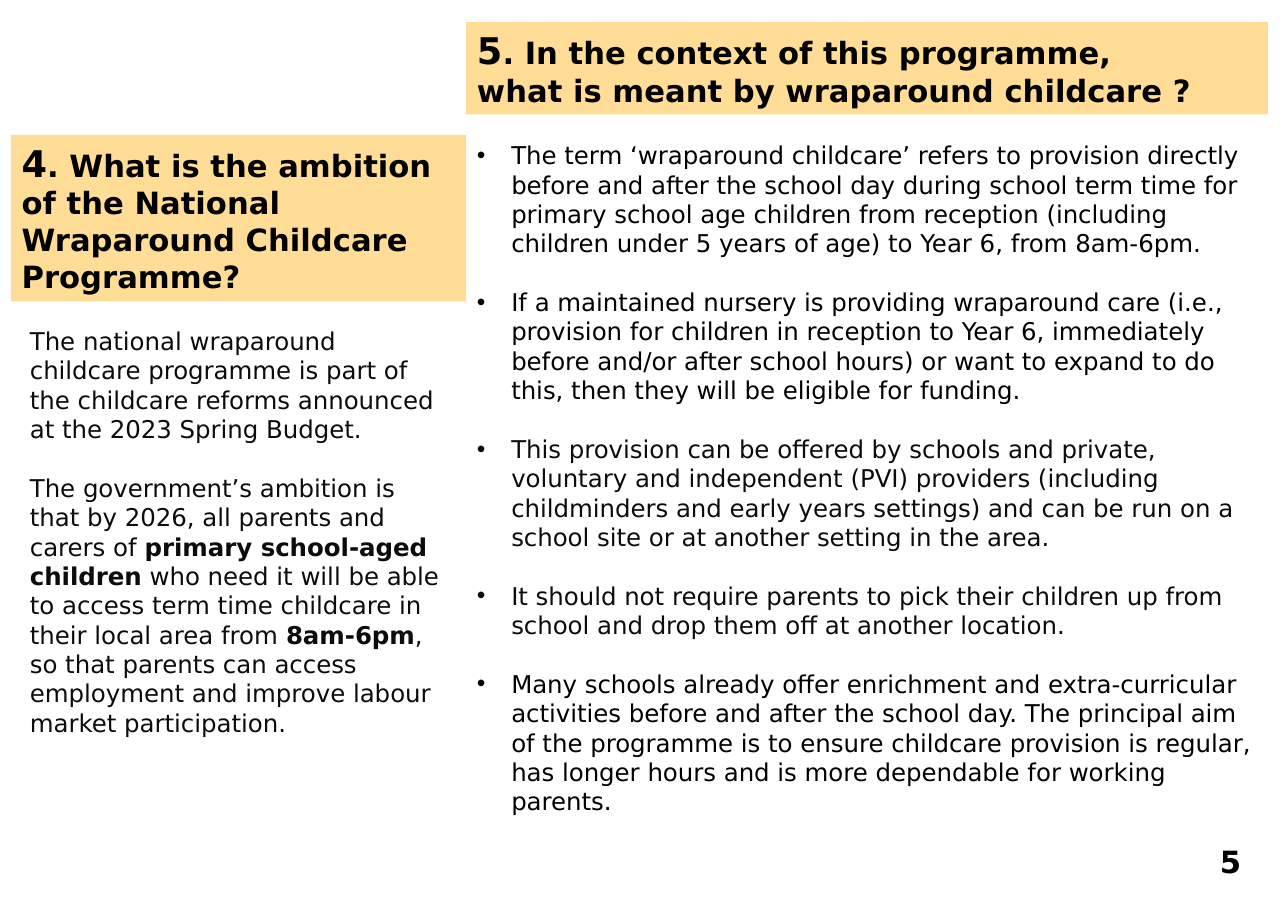
from lxml.etree import SubElement
from pptx import Presentation
from pptx.dml.color import RGBColor
from pptx.enum.shapes import MSO_SHAPE as SHAPE
from pptx.enum.text import MSO_ANCHOR as ANCHOR, PP_ALIGN as ALIGN
from pptx.oxml.ns import qn
from pptx.util import Cm, Pt

COLORS = {"band": "FFDD97", "black": "000000", "ink": "0C0C0C"}
FONT = "DejaVu Sans"
RIGHT_X, RIGHT_W = 10.75, 18.49

AMBITION = [
    [("The national wraparound childcare programme is part of the childcare reforms "
      "announced at the 2023 Spring Budget.", False)],
    [("The government’s ambition is that by 2026, all parents and carers of ", False),
     ("primary school-aged children", True),
     (" who need it will be able to access term time childcare in their local area from ", False),
     ("8am-6pm", True),
     (", so that parents can access employment and improve labour market participation.", False)],
]

MEANING = [
    ("The term ‘wraparound childcare’ refers to provision directly before and after the "
     "school day during school term time for primary school age children from reception "
     "(including children under 5 years of age) to Year 6, from 8am-6pm.", "black"),
    ("If a maintained nursery is providing wraparound care (i.e., provision for children in "
     "reception to Year 6, immediately before and/or after school hours) or want to expand "
     "to do this, then they will be eligible for funding.", "black"),
    ("This provision can be offered by schools and private, voluntary and independent (PVI) "
     "providers (including childminders and early years settings) and can be run on a "
     "school site or at another setting in the area.", "ink"),
    ("It should not require parents to pick their children up from school and drop them off "
     "at another location.", "ink"),
    ("Many schools already offer enrichment and extra-curricular activities before and after "
     "the school day. The principal aim of the programme is to ensure childcare provision "
     "is regular, has longer hours and is more dependable for working parents.", "black"),
]


def add_run(p, text, size=16, color="black", bold=False):
    r = p.add_run()
    r.text = text
    r.font.name = FONT
    r.font.size = Pt(size)
    r.font.bold = bold
    r.font.color.rgb = RGBColor.from_string(COLORS[color])


def add_bullet(p, indent=0.79):
    pPr = p._p.get_or_add_pPr()
    pPr.set("marL", str(Cm(indent)))
    pPr.set("indent", str(-Cm(indent)))
    SubElement(pPr, qn("a:buFont")).set("typeface", "Arial")
    SubElement(pPr, qn("a:buChar")).set("char", "•")


class SlideBuilder:
    gap = Pt(19.2)

    def __init__(self, prs):
        self.s = prs.slides.add_slide(prs.slide_layouts[6])

    def paragraphs(self, sp, count, align=ALIGN.LEFT, gap=Pt(0)):
        tf = sp.text_frame
        tf.word_wrap = True
        tf.vertical_anchor = ANCHOR.TOP
        for i in range(count):
            p = tf.add_paragraph() if i else tf.paragraphs[0]
            p.alignment = align
            p.space_before = gap if i else Pt(0)
            yield p

    def text_box(self, x, y, w, h):
        return self.s.shapes.add_textbox(Cm(x), Cm(y), Cm(w), Cm(h))

    def heading(self, x, y, w, h, number, lines):
        sp = self.s.shapes.add_shape(SHAPE.RECTANGLE, Cm(x), Cm(y), Cm(w), Cm(h))
        sp.shadow.inherit = False
        sp.fill.solid()
        sp.fill.fore_color.rgb = RGBColor.from_string(COLORS["band"])
        sp.line.fill.background()
        for i, p in enumerate(self.paragraphs(sp, len(lines))):
            if i == 0:
                add_run(p, number, size=24, bold=True)
            add_run(p, lines[i], size=20, bold=True)

    def body(self, x, y, w, h, paragraphs):
        sp = self.text_box(x, y, w, h)
        ps = self.paragraphs(sp, len(paragraphs), gap=self.gap)
        for p, runs in zip(ps, paragraphs):
            for text, bold in runs:
                add_run(p, text, color="ink", bold=bold)

    def bullets(self, x, y, w, h, items):
        sp = self.text_box(x, y, w, h)
        ps = self.paragraphs(sp, len(items), gap=self.gap)
        for p, (text, color) in zip(ps, items):
            add_bullet(p)
            add_run(p, text, color=color)

    def page_number(self, x, y, w, h, number):
        sp = self.text_box(x, y, w, h)
        for p in self.paragraphs(sp, 1, align=ALIGN.CENTER):
            add_run(p, number, size=20, bold=True)


def main():
    prs = Presentation()
    prs.slide_width, prs.slide_height = Cm(29.7), Cm(21)
    page = SlideBuilder(prs)
    page.heading(0.25, 3.11, 10.5, 3.84, "4",
                 [". What is the ambition of the National Wraparound Childcare Programme?"])
    page.body(0.44, 7.39, 10.11, 9.83, AMBITION)
    page.heading(RIGHT_X, 0.51, RIGHT_W, 2.13, "5",
                 [". In the context of this programme,",
                  "what is meant by wraparound childcare ?"])
    page.bullets(RIGHT_X, 3.11, RIGHT_W, 16.66, MEANING)
    page.page_number(27.69, 19.3, 1.37, 1.12, "5")
    prs.save("out.pptx")


if __name__ == "__main__":
    main()
